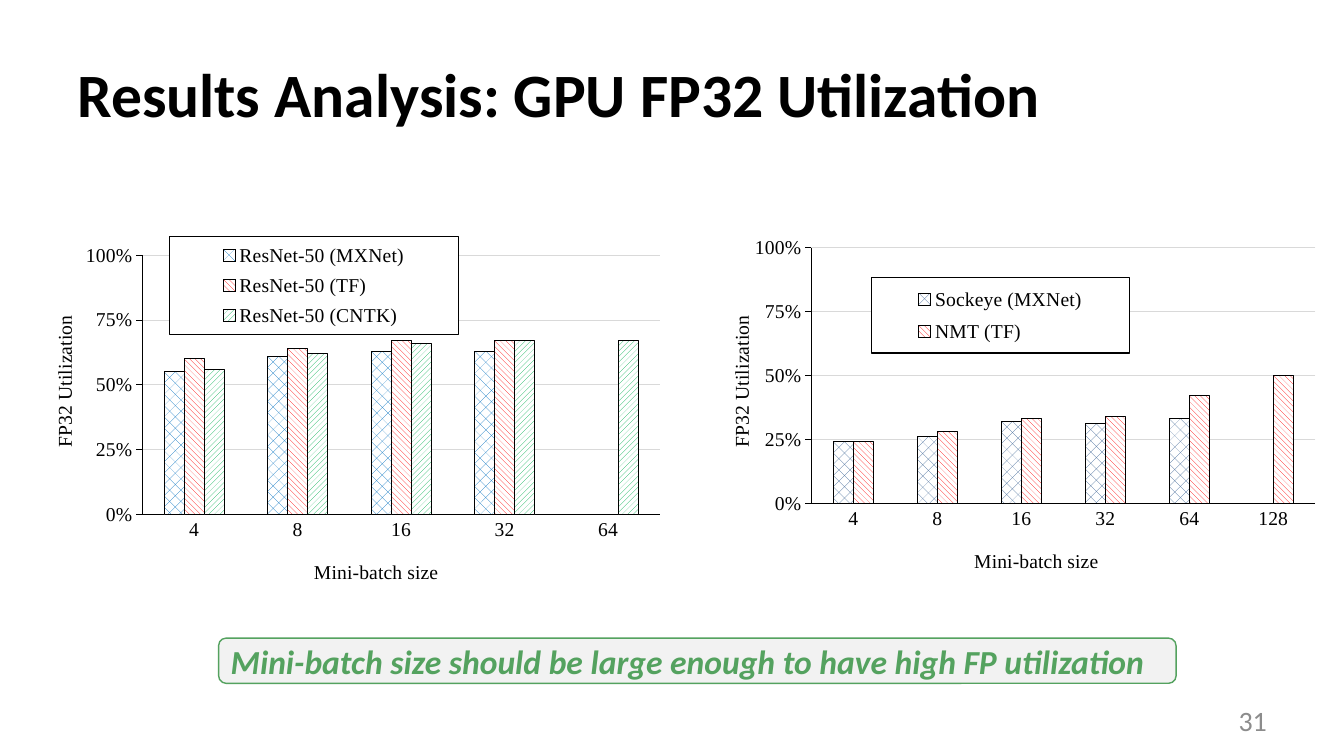
from lxml.etree import SubElement
from pptx import Presentation
from pptx.chart.data import CategoryChartData
from pptx.dml.color import RGBColor
from pptx.enum.chart import XL_CHART_TYPE, XL_LEGEND_POSITION, XL_TICK_MARK
from pptx.enum.dml import MSO_PATTERN
from pptx.enum.shapes import MSO_SHAPE
from pptx.enum.text import MSO_ANCHOR, PP_ALIGN
from pptx.oxml import parse_xml
from pptx.oxml.ns import nsdecls, qn
from pptx.util import Cm, Pt

COLORS = {"black": "000000", "white": "FFFFFF", "grid": "D9D9D9", "number": "8C8C8C",
          "panel": "F2F2F2", "accent": "54A25F", "navy": "376092", "blue": "0070C0",
          "red": "FF0000", "green": "00B050"}
TITLE = "Results Analysis: GPU FP32 Utilization"
TAKEAWAY = "Mini-batch size should be large enough to have high FP utilization"
PAGE_NUMBER = "31"
CATEGORY_TITLE = "Mini-batch size"
VALUE_TITLE = "FP32 Utilization"

# Boxes are left, top, width, height in cm; layouts are fractions of the chart.
CHARTS = [
    {"box": (16.94, 5.77, 16.71, 9.47),
     "categories": ["4", "8", "16", "32", "64", "128"],
     "series": [
         ("Sockeye (MXNet)", (0.24, 0.26, 0.32, 0.31, 0.33, None),
          MSO_PATTERN.PERCENT_25, "navy"),
         ("NMT (TF)", (0.24, 0.28, 0.33, 0.34, 0.42, 0.5),
          MSO_PATTERN.WIDE_DOWNWARD_DIAGONAL, "red")],
     "plot": (0.21, 0.05, 0.76, 0.68), "legend": (0.3, 0.13, 0.39, 0.2),
     "category_title": (0.45, 0.84), "value_title": (0.08, 0.22)},
    {"box": (0.2, 5.77, 16.94, 9.47),
     "categories": ["4", "8", "16", "32", "64"],
     "series": [
         ("ResNet-50 (MXNet)", (0.55, 0.61, 0.63, 0.63, None),
          MSO_PATTERN.PERCENT_25, "blue"),
         ("ResNet-50 (TF)", (0.6, 0.64, 0.67, 0.67, None),
          MSO_PATTERN.WIDE_DOWNWARD_DIAGONAL, "red"),
         ("ResNet-50 (CNTK)", (0.56, 0.62, 0.66, 0.67, 0.67),
          MSO_PATTERN.WIDE_UPWARD_DIAGONAL, "green")],
     "plot": (0.2, 0.07, 0.77, 0.69), "legend": (0.24, 0.02, 0.43, 0.26),
     "category_title": (0.45, 0.87), "value_title": (0.06, 0.22)},
]


def color(name):
    return RGBColor.from_string(COLORS[name])


def style_font(font, size, name, face, bold=False, italic=False):
    font.size, font.name, font.bold, font.italic = Pt(size), face, bold, italic
    font.color.rgb = color(name)


def style_line(line, name, width=0.75):
    line.color.rgb = color(name)
    line.width = Pt(width)


def write(shape, text, size, name, align=PP_ALIGN.LEFT, bold=False, italic=False):
    frame = shape.text_frame
    frame.word_wrap = True
    frame.vertical_anchor = MSO_ANCHOR.MIDDLE
    para = frame.paragraphs[0]
    para.alignment = align
    span = para.add_run()
    span.text = text
    style_font(span.font, size, name, "Calibri", bold, italic)


def add_text(page, box, *style, **options):
    write(page.shapes.add_textbox(*map(Cm, box)), *style, **options)


def place(element, index, fractions, inner=False):
    """Give a chart part a manual layout, as child number index."""
    for old in element.findall(qn("c:layout")):
        element.remove(old)
    layout = parse_xml(f"<c:layout {nsdecls('c')}><c:manualLayout/></c:layout>")
    settings = [("layoutTarget", "inner")] if inner else []
    settings += [("xMode", "edge"), ("yMode", "edge")]
    settings += zip("xywh", map(str, fractions))
    for tag, value in settings:
        SubElement(layout[0], qn("c:" + tag)).set("val", value)
    element.insert(index, layout)


def style_axis(axis, title, position, tick):
    axis.major_tick_mark = tick
    axis.minor_tick_mark = XL_TICK_MARK.NONE
    style_line(axis.format.line, "black")
    style_font(axis.tick_labels.font, 14, "black", "Times New Roman")
    span = axis.axis_title.text_frame.paragraphs[0].add_run()
    span.text = title
    style_font(span.font, 14, "black", "Times New Roman")
    place(axis.axis_title._element, 1, position)


def style_legend(chart, fractions):
    chart.has_legend = True
    legend = chart.legend
    legend.position = XL_LEGEND_POSITION.RIGHT
    legend.include_in_layout = False
    style_font(legend.font, 14, "black", "Times New Roman")
    place(legend._element, 1, fractions)
    frame = parse_xml(
        f"<c:spPr {nsdecls('c', 'a')}>"
        f"<a:solidFill><a:srgbClr val='{COLORS['white']}'/></a:solidFill>"
        f"<a:ln w='{Pt(0.75)}'><a:solidFill><a:srgbClr val='{COLORS['black']}'/>"
        "</a:solidFill></a:ln></c:spPr>")
    legend._element.find(qn("c:overlay")).addnext(frame)


def add_utilization_chart(page, content):
    data = CategoryChartData(number_format="0%")
    data.categories = content["categories"]
    for name, values, _, _ in content["series"]:
        data.add_series(name, values)
    chart = page.shapes.add_chart(XL_CHART_TYPE.COLUMN_CLUSTERED,
                                  *map(Cm, content["box"]), data).chart
    chart.has_title = False
    style_font(chart.font, 14, "black", "Times New Roman")

    plot = chart.plots[0]
    plot.vary_by_categories = False
    plot.gap_width, plot.overlap = 219, 0
    for series, (_, _, pattern, ink) in zip(plot.series, content["series"]):
        fill = series.format.fill
        fill.patterned()
        fill.pattern = pattern
        fill.fore_color.rgb, fill.back_color.rgb = color(ink), color("white")
        style_line(series.format.line, "black")

    style_axis(chart.category_axis, CATEGORY_TITLE, content["category_title"],
               XL_TICK_MARK.NONE)
    axis = chart.value_axis
    style_axis(axis, VALUE_TITLE, content["value_title"], XL_TICK_MARK.OUTSIDE)
    axis.minimum_scale, axis.maximum_scale, axis.major_unit = 0, 1, 0.25
    axis.tick_labels.number_format = "0%"
    axis.tick_labels.number_format_is_linked = False
    style_line(axis.major_gridlines.format.line, "grid")

    style_legend(chart, content["legend"])
    place(chart._chartSpace.chart.plotArea, 0, content["plot"], inner=True)


def add_takeaway(page):
    banner = page.shapes.add_shape(MSO_SHAPE.ROUNDED_RECTANGLE,
                                   Cm(5.51), Cm(16.08), Cm(24.13), Cm(1.14))
    banner.shadow.inherit = False
    banner.fill.solid()
    banner.fill.fore_color.rgb = color("panel")
    style_line(banner.line, "accent", 1)
    write(banner, TAKEAWAY, 24, "accent", bold=True, italic=True)


def main():
    deck = Presentation()
    deck.slide_width, deck.slide_height = Cm(33.87), Cm(19.05)
    page = deck.slides.add_slide(deck.slide_layouts[6])
    add_text(page, (1.7, 0.76, 30.48, 3.18), TITLE, 44, "black", bold=True)
    add_text(page, (24.28, 17.65, 7.9, 1.02), PAGE_NUMBER, 20, "number",
             align=PP_ALIGN.RIGHT)
    for content in CHARTS:
        add_utilization_chart(page, content)
    add_takeaway(page)
    deck.save("out.pptx")


if __name__ == "__main__":
    main()
